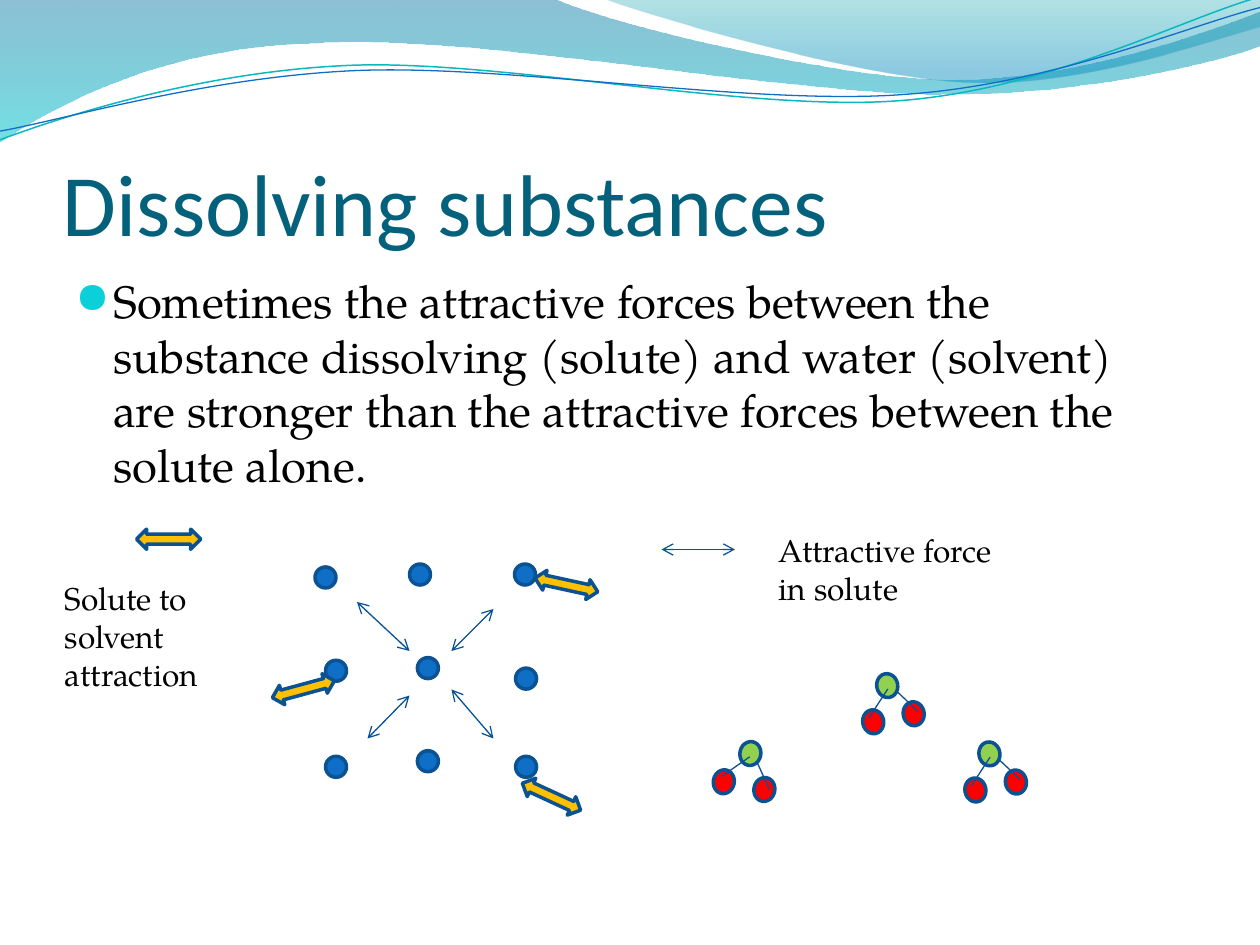
"""Build the slide on dissolving substances."""
from math import cos, radians, sin
from lxml.etree import SubElement as Sub
from pptx import Presentation
from pptx.dml.color import RGBColor as RGB
from pptx.enum.shapes import MSO_CONNECTOR as CON, MSO_SHAPE as SHP
from pptx.enum.text import MSO_ANCHOR as ANC
from pptx.oxml.ns import qn
from pptx.util import Pt

BLUE = RGB(0x0F, 0x6F, 0xC6)
EDGE = RGB(0x0B, 0x52, 0x92)
INK = RGB(0x09, 0x52, 0x95)
TEAL = RGB(0x0A, 0xB8, 0xBF)
RED = RGB(0xFF, 0x00, 0x00)
GREEN = RGB(0x92, 0xD0, 0x50)
GOLD = RGB(0xFF, 0xC0, 0x00)
TITLE = RGB(0x04, 0x61, 0x7B)
BLACK = RGB(0x00, 0x00, 0x00)
SEA = RGB(0x00, 0x74, 0xA1)
AQUA = RGB(0x00, 0xC6, 0xCF)
MINT = RGB(0x00, 0xA1, 0xA9)
SKY = RGB(0x00, 0x8B, 0xBF)
SERIF = "TeX Gyre Pagella"


def add_shape(home, kind, x, y, w, h, color, turn=0):
    shape = home.add_shape(kind, Pt(x), Pt(y), Pt(w), Pt(h))
    shape.shadow.inherit = False
    shape.rotation = turn
    shape.fill.solid()
    shape.fill.fore_color.rgb = color
    shape.line.color.rgb = EDGE
    shape.line.width = Pt(2)


def add_line(home, x1, y1, x2, y2, heads=False):
    line = home.add_connector(CON.STRAIGHT, Pt(x1), Pt(y1), Pt(x2), Pt(y2))
    line.line.color.rgb = INK
    line.line.width = Pt(0.75)
    props = line.element.spPr
    if heads:
        for end in ("a:headEnd", "a:tailEnd"):
            Sub(props.find(qn("a:ln")), qn(end), type="arrow")
    Sub(props, qn("a:effectLst"))


prs = Presentation()
prs.slide_width, prs.slide_height = Pt(720), Pt(540)
slide = prs.slides.add_slide(prs.slide_layouts[6])
shapes = slide.shapes

waves = [
    ((0, 0), [(316.8, -0.7), (342.7, 12.2, 478.1, 45.4, 545.8, 45.4),
              (614.2, 45.4, 689.8, 18.7, 720, 6.5), (720.7, 25.9),
              (707.8, 31.7, 626.4, 54.7, 537.1, 54), (447.8, 54, 275, 20.2, 185, 24.5),
              (92.9, 25.9, 33.1, 59.8, -0.7, 81.4)],
     [(0, SEA, 45), (1, AQUA, 55)], None, 0),
    ((344.9, -0.7), [(366.5, 7.9, 491, 44.6, 553.7, 46.8),
                     (616.3, 49.7, 691.9, 23, 720, 15.1), (720, 0)],
     [(0, MINT, 30), (0.8, SKY, 45)], None, 0),
    ((0, 79.9), [(34.6, 67, 113.8, 41, 199.4, 37.4), (284.4, 33.8, 427, 64.1, 513.4, 57.6),
                 (599.8, 51.1, 675.4, 10.8, 718.6, -1.4)], None, TEAL, 0.85),
    ((0, 74.9), [(33.8, 69.1, 118.1, 43.9, 203.8, 40.3), (290.2, 36.7, 429.8, 60.5, 516.2, 54),
                 (601.9, 48.2, 677.5, 15.1, 720, 4.3)], None, BLUE, 0.75),
]
for start, parts, stops, color, width in waves:
    pen = shapes.build_freeform(Pt(start[0]), Pt(start[1]))
    for part in parts:
        dots = [(Pt(x), Pt(y)) for x, y in zip(part[::2], part[1::2])]
        pen.add_line_segments(dots, close=bool(stops) and part is parts[-1])
    wave = pen.convert_to_shape()
    wave.shadow.inherit = False
    legs = wave.element.spPr.findall(".//" + qn("a:lnTo"))
    for part in parts:
        count = len(part) // 2
        group, legs = legs[:count], legs[count:]
        if count == 3:
            curve = Sub(group[0].getparent(), qn("a:cubicBezTo"))
            group[0].addprevious(curve)
            for leg in group:
                curve.append(leg[0])
                leg.getparent().remove(leg)
    if stops:
        wave.line.fill.background()
        wave.fill.gradient()
        wave.fill.gradient_angle = 270
        for stop, (place, shade, alpha) in zip(wave.fill.gradient_stops, stops):
            stop.position = place
            stop.color.rgb = shade
        tints = wave.element.spPr.iter(qn("a:srgbClr"))
        for tint, (place, shade, alpha) in zip(tints, stops):
            Sub(tint, qn("a:alpha"), val=str(alpha * 1000))
    else:
        wave.fill.background()
        wave.line.color.rgb = color
        wave.line.width = Pt(width)

texts = [
    ("Dissolving substances", 36, 55.4, 648, 90, 50, "Calibri", TITLE),
    ("Sometimes the attractive forces between the substance dissolving (solute) "
     "and water (solvent) are stronger than the attractive forces between the "
     "solute alone.", 36, 152.5, 648, 345.6, 26, SERIF, BLACK),
    ("Attractive force in solute", 438, 300, 150, 51, 18, SERIF, BLACK),
    ("Solute to solvent attraction", 30, 327.3, 118, 72.7, 18, SERIF, BLACK),
]
for words, x, y, w, h, size, font, color in texts:
    frame = shapes.add_textbox(Pt(x), Pt(y), Pt(w), Pt(h)).text_frame
    frame.word_wrap = True
    para = frame.paragraphs[0]
    run = para.add_run()
    run.text = words
    run.font.size = Pt(size)
    run.font.name = font
    run.font.color.rgb = color
    if size == 50:
        frame.vertical_anchor = ANC.BOTTOM
        frame.margin_left = frame.margin_right = frame.margin_bottom = 0
    if size == 26:
        para.space_before = Pt(5.2)
        props = para._p.get_or_add_pPr()
        props.set("marL", str(Pt(21.6)))
        props.set("indent", str(Pt(-21.6)))
        Sub(Sub(props, qn("a:buClr")), qn("a:srgbClr"), val="0BD0D9")
        Sub(props, qn("a:buSzPct"), val="95000")
        Sub(props, qn("a:buFont"), typeface="OpenSymbol")
        Sub(props, qn("a:buChar"), char="●")

for x, y in [(180, 324), (234, 322.3), (294, 322.3),
             (186, 377.3), (238.5, 375.8), (294.6, 381.8),
             (186, 432.2), (238.5, 429), (294.6, 432.2)]:
    add_shape(shapes, SHP.OVAL, x, y, 12, 12, BLUE)

for ends in [(258, 372, 282, 348), (210, 422, 234, 397.5), (258, 394, 282, 422),
             (204, 344, 234, 372), (378, 314, 420, 314)]:
    add_line(shapes, *ends, heads=True)

atoms = [(-11.9, 18.7, RED), (11.7, 18.7, RED), (0, 0, GREEN)]
bonds = [(-13.8, 16, 0, 1.9), (14.4, 17.9, 4.7, 4.2)]
for x, y, turn in [(428.8, 430.6, 10.8), (507, 391.8, -11.2), (565.4, 430.8, -11.2)]:
    group = shapes.add_group_shape().shapes
    c, s = cos(radians(turn)), sin(radians(turn))
    for dx, dy, color in atoms:
        add_shape(group, SHP.FLOWCHART_CONNECTOR, x + dx * c - dy * s - 6,
                  y + dx * s + dy * c - 6.85, 12, 13.7, color, turn)
    for x1, y1, x2, y2 in bonds:
        add_line(group, x + x1 * c - y1 * s, y + x1 * s + y1 * c,
                 x + x2 * c - y2 * s, y + x2 * s + y2 * c)

for x, y, turn in [(305.3, 328.5, 12.3), (155, 388.1, -15.2),
                   (78, 302.4, 0), (296.8, 449.5, 24.8)]:
    add_shape(shapes, SHP.LEFT_RIGHT_ARROW, x, y, 36.7, 11.5, GOLD, turn)

prs.save("out.pptx")
